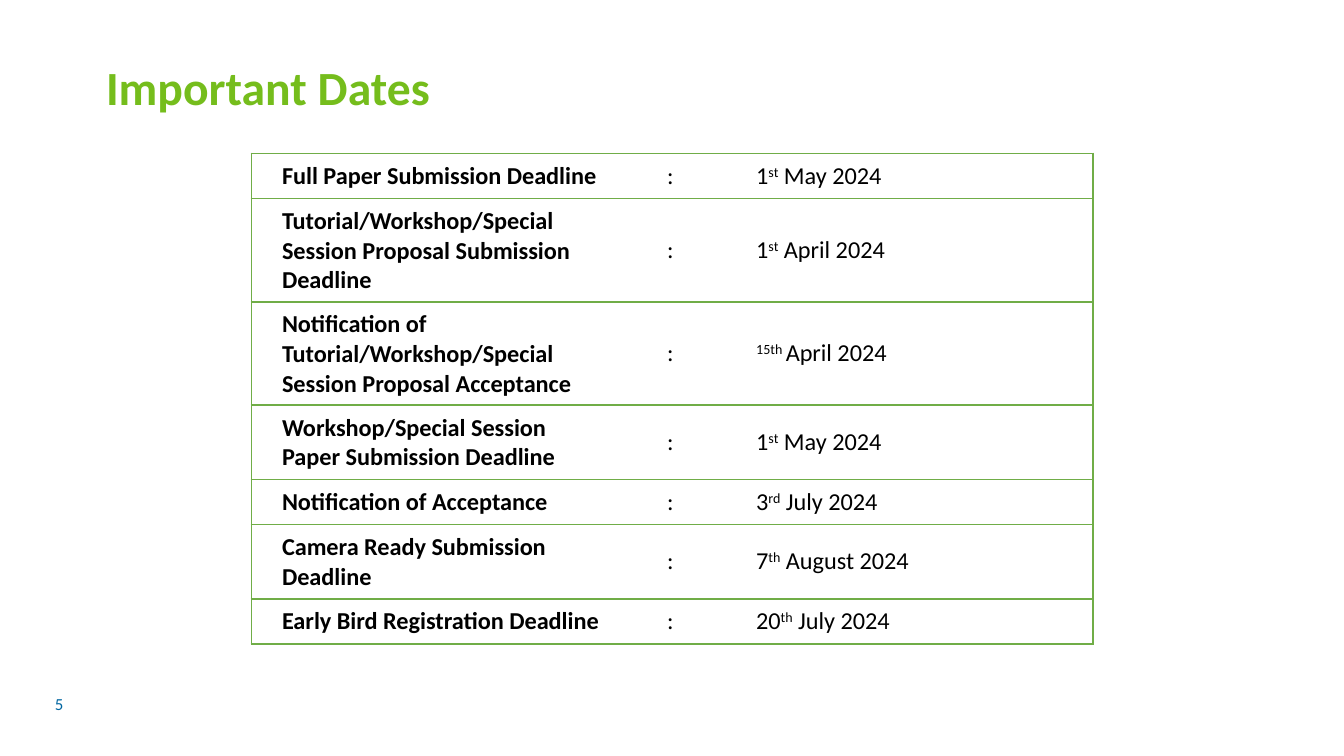
from dataclasses import dataclass

import pptx
import pptx.dml.color
import pptx.enum.text
import pptx.oxml
import pptx.oxml.ns
import pptx.util
from pptx.util import Cm, Pt

FONT = "Calibri"
BLACK, WHITE = "000000", "FFFFFF"
TITLE_GREEN, BORDER_GREEN, NUMBER_BLUE = "75BD1C", "70AD47", "0066A1"
ANCHOR = pptx.enum.text.MSO_ANCHOR
COLUMN_WIDTHS = (7.28, 1.68, 6.95)
ROW_HEIGHTS = {1: 0.85, 2: 1.38, 3: 1.9}  # by number of text lines


@dataclass(frozen=True)
class Deadline:
    label: str
    day: str
    raised: str
    rest: str
    lines: int = 1


DEADLINES = [
    Deadline("Full Paper Submission Deadline", "1", "st", " May 2024"),
    Deadline("Tutorial/Workshop/Special Session Proposal Submission Deadline",
             "1", "st", " April 2024", 3),
    Deadline("Notification of Tutorial/Workshop/Special Session Proposal Acceptance",
             "", "15th ", "April 2024", 3),
    Deadline("Workshop/Special Session Paper Submission Deadline",
             "1", "st", " May 2024", 2),
    Deadline("Notification of Acceptance", "3", "rd", " July 2024"),
    Deadline("Camera Ready Submission Deadline", "7", "th", " August 2024", 2),
    Deadline("Early Bird Registration Deadline", "20", "th", " July 2024"),
]


def rgb(color: str) -> pptx.dml.color.RGBColor:
    return pptx.dml.color.RGBColor.from_string(color)


def add_text(p, text: str, *, size: float = 13, color: str = BLACK,
             bold: bool = False, raised: bool = False) -> None:
    r = p.add_run()
    r.text = text
    r.font.name = FONT
    r.font.size = Pt(size)
    r.font.bold = bold
    r.font.color.rgb = rgb(color)
    if raised:
        r.font._element.set("baseline", "30000")


def set_borders(cell, visible: str) -> None:
    """Draw the sides named in visible (letters of LRTB) and hide the others."""
    tc_pr = cell._tc.get_or_add_tcPr()
    for side in "LRTB":
        paint = (f'<a:solidFill><a:srgbClr val="{BORDER_GREEN}"/></a:solidFill>'
                 if side in visible else "<a:noFill/>")
        tc_pr.append(pptx.oxml.parse_xml(
            f'<a:ln{side} {pptx.oxml.ns.nsdecls("a")} w="{Pt(1)}">{paint}</a:ln{side}>'))


def format_cell(cell, borders: str) -> None:
    set_borders(cell, borders)
    cell.fill.solid()
    cell.fill.fore_color.rgb = rgb(WHITE)
    cell.vertical_anchor = ANCHOR.MIDDLE
    cell.margin_left = cell.margin_right = Cm(0.58)
    cell.margin_top = cell.margin_bottom = Cm(0.15)


def add_title(s, text: str) -> None:
    sp = s.shapes.title
    sp.left, sp.top, sp.width, sp.height = Cm(1.75), Cm(1.17), Cm(21.9), Cm(1.14)
    tf = sp.text_frame
    tf.auto_size = pptx.enum.text.MSO_AUTO_SIZE.NONE
    tf.vertical_anchor = ANCHOR.BOTTOM
    p = tf.paragraphs[0]
    p.alignment = pptx.enum.text.PP_ALIGN.LEFT
    p.line_spacing = 0.9
    add_text(p, text, size=25.5, color=TITLE_GREEN, bold=True)


def add_page_number(s, number: str) -> None:
    sp = s.shapes.add_textbox(Cm(0.79), Cm(12.93), Cm(1.35), Cm(0.76))
    tf = sp.text_frame
    tf.word_wrap = True
    tf.vertical_anchor = ANCHOR.MIDDLE
    add_text(tf.paragraphs[0], number, size=9, color=NUMBER_BLUE)


def add_deadline_table(s, deadlines: list[Deadline]) -> None:
    heights = [ROW_HEIGHTS[d.lines] for d in deadlines]
    table = s.shapes.add_table(
        len(deadlines), len(COLUMN_WIDTHS), Cm(4.75), Cm(2.9),
        Cm(sum(COLUMN_WIDTHS)), Cm(sum(heights))).table
    table.first_row = table.horz_banding = False
    for column, width in zip(table.columns, COLUMN_WIDTHS):
        column.width = Cm(width)
    for row, height, d in zip(table.rows, heights, deadlines):
        row.height = Cm(height)
        for cell, borders in zip(row.cells, ("LTB", "TB", "RTB")):
            format_cell(cell, borders)
        label, colon, date = (c.text_frame.paragraphs[0] for c in row.cells)
        add_text(label, d.label, bold=True)
        add_text(colon, ":")
        if d.day:
            add_text(date, d.day)
        add_text(date, d.raised, raised=True)
        add_text(date, d.rest)


def main() -> None:
    prs = pptx.Presentation()
    prs.slide_width, prs.slide_height = Cm(25.4), Cm(14.29)
    s = prs.slides.add_slide(prs.slide_layouts.get_by_name("Title Only"))
    add_title(s, "Important Dates")
    add_page_number(s, "5")
    add_deadline_table(s, DEADLINES)
    prs.save("out.pptx")


if __name__ == "__main__":
    main()
